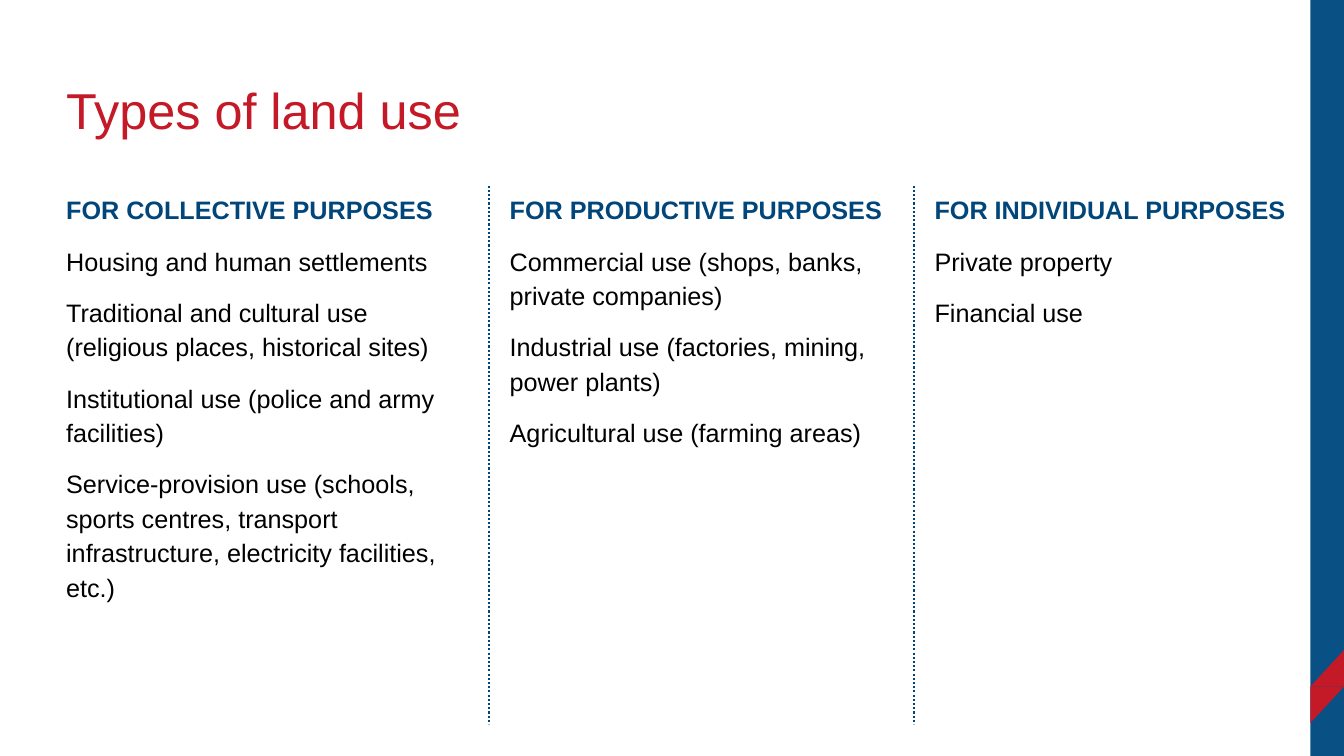
from pptx import Presentation
from pptx.dml.color import RGBColor
from pptx.enum.dml import MSO_LINE
from pptx.enum.shapes import MSO_CONNECTOR, MSO_SHAPE
from pptx.enum.text import MSO_ANCHOR
from pptx.oxml.ns import qn
from pptx.util import Pt
from lxml.etree import SubElement

WIDTH, HEIGHT = 960, 540
BAND_LEFT, BAND_WIDTH = 936, 24
RIBBON_MIDDLE, RIBBON_HALF = 490.4, 26
COLUMN_TOP, COLUMN_HEIGHT = 132.6, 384.6
COLUMN_GAP = 15
RED, BAND_BLUE, BLUE, BLACK = "C41927", "095184", "00467B", "000000"

COLUMNS = [
    (40.2, 301.5, "FOR COLLECTIVE PURPOSES", [
        "Housing and human settlements",
        "Traditional and cultural use (religious places, historical sites)",
        "Institutional use (police and army facilities)",
        "Service-provision use (schools, sports centres, transport "
        "infrastructure, electricity facilities, etc.)",
    ]),
    (357, 288.6, "FOR PRODUCTIVE PURPOSES", [
        "Commercial use (shops, banks, private companies)",
        "Industrial use (factories, mining, power plants)",
        "Agricultural use (farming areas)",
    ]),
    (660.5, 266, "FOR INDIVIDUAL PURPOSES", [
        "Private property",
        "Financial use",
    ]),
]


def color(hex_code):
    return RGBColor.from_string(hex_code)


class SlideBuilder:
    font_name = "Arial"

    def __init__(self, slide):
        self.shapes = slide.shapes

    def block(self, preset, left, top, width, height, fill, flip=None):
        """Draw a filled preset shape; flip is "flipH", "flipV" or None."""
        block = self.shapes.add_shape(preset, Pt(left), Pt(top), Pt(width), Pt(height))
        block.shadow.inherit = False
        block.fill.solid()
        block.fill.fore_color.rgb = color(fill)
        block.line.fill.background()
        if flip:
            block.element.spPr.xfrm.set(flip, "1")

    def frame(self, left, top, width, height, anchor=MSO_ANCHOR.TOP):
        box = self.shapes.add_textbox(Pt(left), Pt(top), Pt(width), Pt(height))
        frame = box.text_frame
        frame.word_wrap = True
        frame.vertical_anchor = anchor
        return frame

    def style(self, paragraph, size, hex_code, spacing, bold=False):
        paragraph.line_spacing = spacing
        font = paragraph.font
        font.name, font.size, font.bold = self.font_name, Pt(size), bold
        font.color.rgb = color(hex_code)

    def title(self, text):
        frame = self.frame(40.2, 28.8, 828, 104.4, MSO_ANCHOR.MIDDLE)
        frame.text = text
        self.style(frame.paragraphs[0], 36, RED, 0.9)

    def column(self, left, width, heading, uses):
        frame = self.frame(left, COLUMN_TOP, width, COLUMN_HEIGHT)
        frame.text = "\n".join([heading, *uses])
        for index, paragraph in enumerate(frame.paragraphs):
            is_heading = index == 0
            self.style(paragraph, 18, BLUE if is_heading else BLACK, 1.14, is_heading)
            paragraph.space_before = Pt(0 if is_heading else 6)
            paragraph.space_after = Pt(6)

    def divider(self, x):
        divider = self.shapes.add_connector(
            MSO_CONNECTOR.STRAIGHT, Pt(x), Pt(COLUMN_TOP), Pt(x), Pt(COLUMN_TOP + COLUMN_HEIGHT))
        divider.line.color.rgb = color(BLUE)
        divider.line.width = Pt(1.5)
        divider.line.dash_style = MSO_LINE.ROUND_DOT
        SubElement(divider.element.spPr, qn("a:effectLst"))


def main():
    presentation = Presentation()
    presentation.slide_width, presentation.slide_height = Pt(WIDTH), Pt(HEIGHT)
    builder = SlideBuilder(presentation.slides.add_slide(presentation.slide_layouts[6]))

    builder.block(MSO_SHAPE.RECTANGLE, BAND_LEFT, 0, BAND_WIDTH, HEIGHT, BAND_BLUE)
    for top, flip in ((RIBBON_MIDDLE, "flipV"), (RIBBON_MIDDLE - RIBBON_HALF, "flipH")):
        builder.block(MSO_SHAPE.RIGHT_TRIANGLE, BAND_LEFT, top, BAND_WIDTH, RIBBON_HALF, RED, flip)

    builder.title("Types of land use")
    for left, width, heading, uses in COLUMNS:
        builder.column(left, width, heading, uses)
    for left, *_ in COLUMNS[1:]:
        builder.divider(left - COLUMN_GAP / 2)

    presentation.save("out.pptx")


if __name__ == "__main__":
    main()
